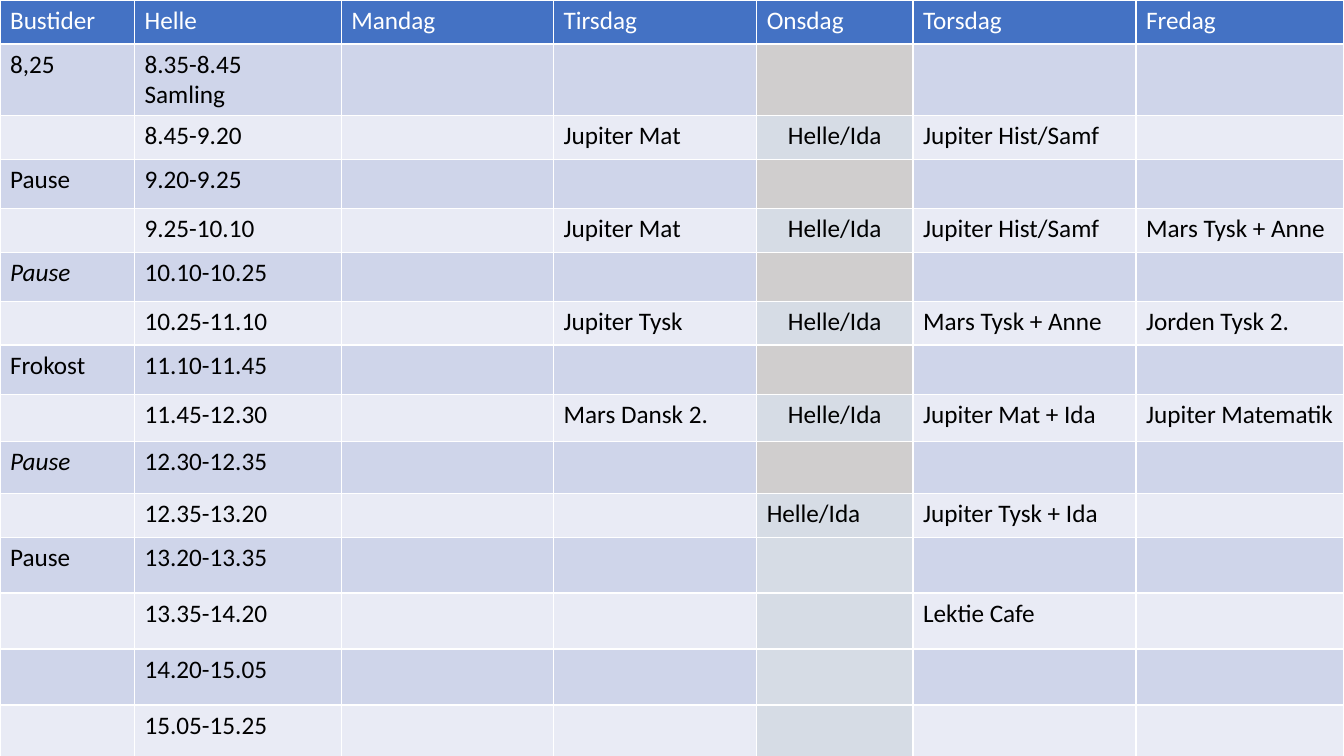
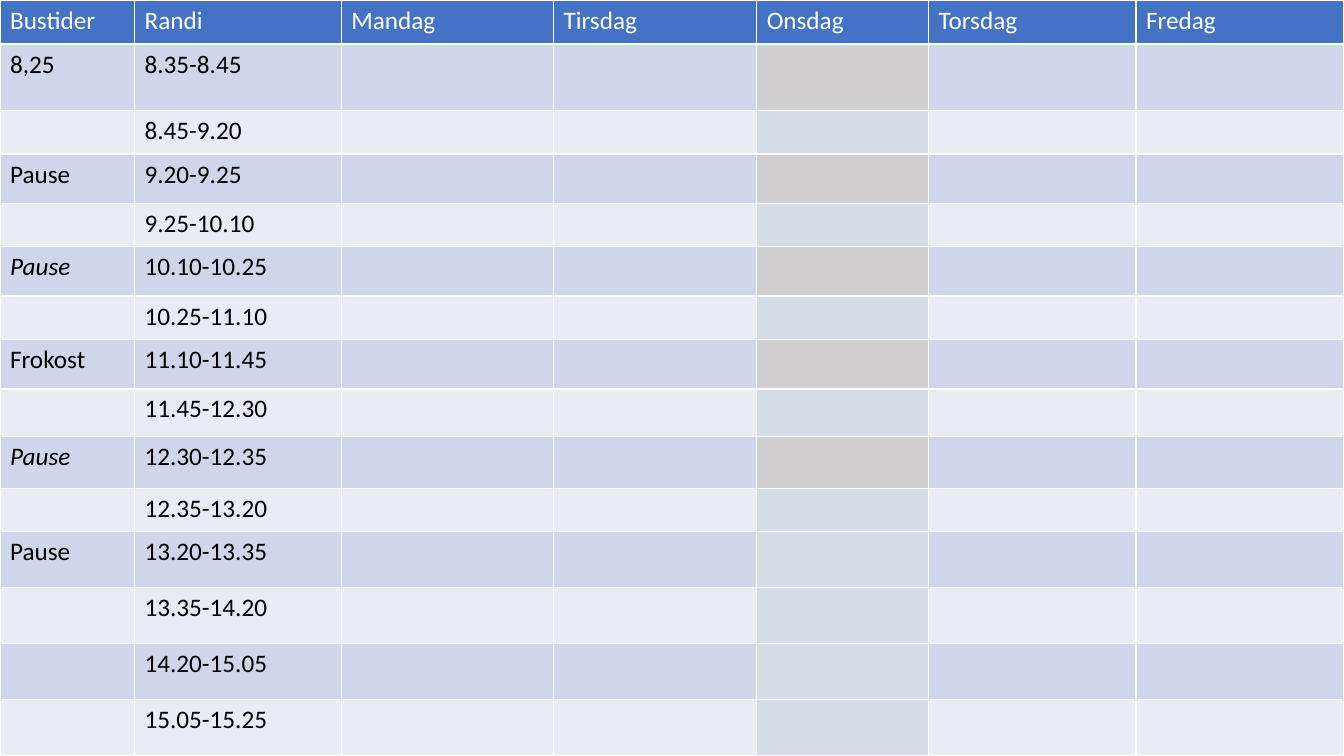
from pptx import Presentation
from pptx.dml.color import RGBColor
from pptx.enum.text import PP_ALIGN
from pptx.util import Cm, Pt

HEADER = RGBColor(0x44, 0x72, 0xC4)
BANDS = [RGBColor(0xE9, 0xEB, 0xF5), RGBColor(0xCF, 0xD5, 0xEA)]
WEDNESDAY = RGBColor(0xD6, 0xDC, 0xE5)
WEDNESDAY_BREAK = RGBColor(0xD0, 0xCE, 0xCE)
WHITE = RGBColor(0xFF, 0xFF, 0xFF)
BLACK = RGBColor(0x00, 0x00, 0x00)

DAYS = ["Mandag", "Tirsdag", "Onsdag", "Torsdag", "Fredag"]
TUE, WED, THU, FRI = 3, 4, 5, 6
BREAKS = {1: "8,25", 3: "Pause", 5: "Pause", 7: "Frokost", 9: "Pause", 11: "Pause"}
ITALIC_ROWS = (5, 9)
LAST_GREY_ROW = 9
TIMES = ["8.35-8.45", "8.45-9.20", "9.20-9.25", "9.25-10.10", "10.10-10.25",
         "10.25-11.10", "11.10-11.45", "11.45-12.30", "12.30-12.35",
         "12.35-13.20", "13.20-13.35", "13.35-14.20", "14.20-15.05", "15.05-15.25"]
HEIGHTS = [1.11, 1.67, 1.1, 1.24, 1.1, 1.24, 1.1, 1.24, 1.2, 1.3, 1.1] + [1.41] * 4
LEFT_WIDTHS = [3.39, 5.21, 5.35, 5.12]

HELLE_LESSONS = {
    (1, 1): "8.35-8.45\nSamling",
    (2, TUE): "Jupiter Mat", (2, THU): "Jupiter Hist/Samf",
    (4, TUE): "Jupiter Mat", (4, THU): "Jupiter Hist/Samf", (4, FRI): "Mars Tysk + Anne",
    (6, TUE): "Jupiter Tysk", (6, THU): "Mars Tysk + Anne", (6, FRI): "Jorden Tysk 2.",
    (8, TUE): "Mars Dansk 2.", (8, THU): "Jupiter Mat + Ida", (8, FRI): "Jupiter Matematik",
    (10, THU): "Jupiter Tysk + Ida",
    (12, THU): "Lektie Cafe",
}
for row in (2, 4, 6, 8, 10):
    HELLE_LESSONS[row, WED] = "Helle/Ida"

TIMETABLES = [
    ("Helle", [3.94, 5.62, 5.24], HELLE_LESSONS),
    ("Randi", [4.33, 5.23, 5.24], {}),
]


def cell_fill(row, col):
    if row == 0:
        return HEADER
    if col == WED:
        return WEDNESDAY_BREAK if row % 2 and row <= LAST_GREY_ROW else WEDNESDAY
    return BANDS[row % 2]


prs = Presentation()
prs.slide_width, prs.slide_height = Cm(33.87), Cm(19.05)

for teacher, right_widths, lessons in TIMETABLES:
    s = prs.slides.add_slide(prs.slide_layouts[6])
    widths = LEFT_WIDTHS + right_widths
    table = s.shapes.add_table(len(HEIGHTS), len(widths), 0, 0,
                               Cm(sum(widths)), Cm(sum(HEIGHTS))).table
    for column, width in zip(table.columns, widths):
        column.width = Cm(width)
    for table_row, height in zip(table.rows, HEIGHTS):
        table_row.height = Cm(height)

    texts = {(0, col): day for col, day in enumerate(DAYS, 2)}
    texts.update({(0, 0): "Bustider", (0, 1): teacher})
    texts.update({(row, 0): label for row, label in BREAKS.items()})
    texts.update({(row, 1): time for row, time in enumerate(TIMES, 1)})
    texts.update(lessons)

    for row in range(len(HEIGHTS)):
        for col in range(len(widths)):
            cell = table.cell(row, col)
            cell.fill.solid()
            cell.fill.fore_color.rgb = cell_fill(row, col)
            if (row, col) not in texts:
                continue
            cell.text = texts[row, col]
            for p in cell.text_frame.paragraphs:
                p.font.name = "Calibri"
                p.font.size = Pt(18)
                p.font.bold = False
                p.font.italic = col == 0 and row in ITALIC_ROWS
                p.font.color.rgb = BLACK if row else WHITE
                if col == WED and 0 < row < 10:
                    p.alignment = PP_ALIGN.CENTER

prs.save("out.pptx")
